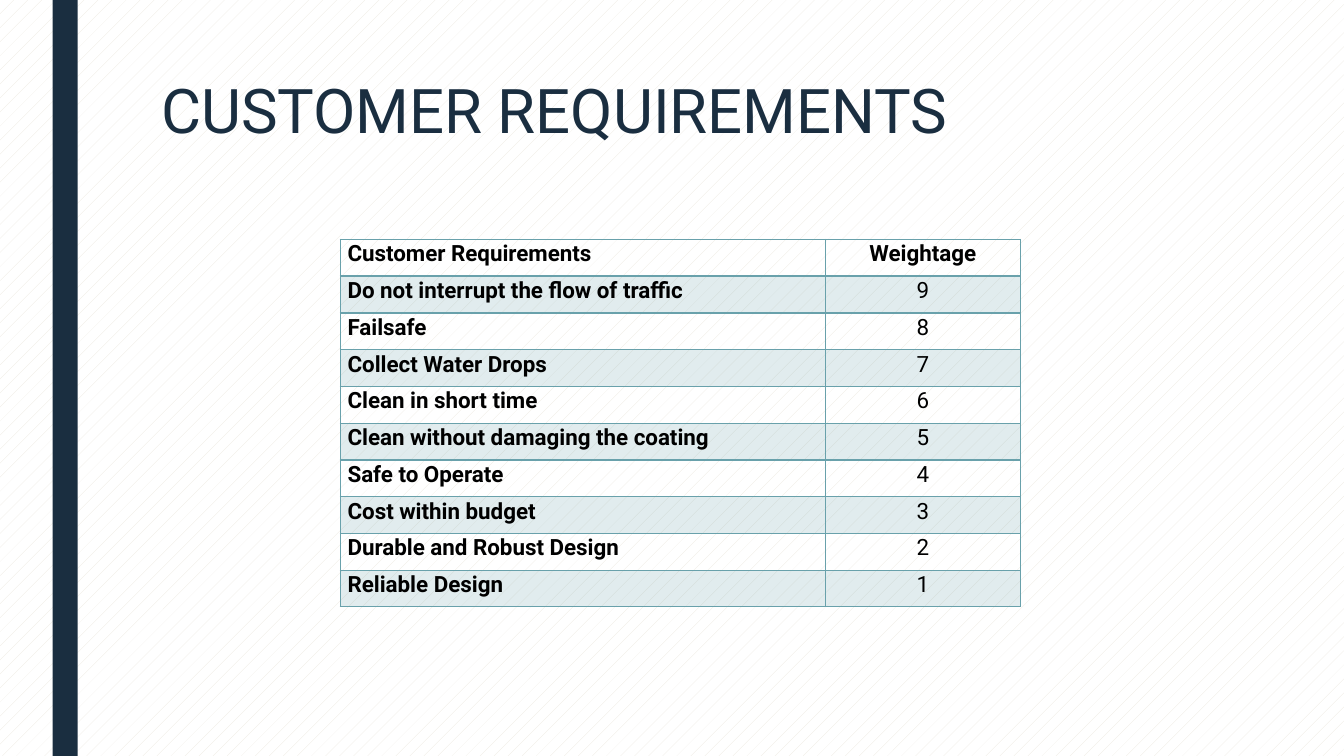
import dataclasses

import lxml.etree
import pptx
import pptx.dml.color
import pptx.enum.dml
import pptx.enum.shapes
import pptx.enum.text
import pptx.oxml
import pptx.oxml.ns
import pptx.util

EMU_PER_PX = 9525
PAGE_WIDTH, PAGE_HEIGHT = 1280, 720

REQUIREMENTS = [
    "Do not interrupt the flow of traffic",
    "Failsafe",
    "Collect Water Drops",
    "Clean in short time",
    "Clean without damaging the coating",
    "Safe to Operate",
    "Cost within budget",
    "Durable and Robust Design",
    "Reliable Design",
]


@dataclasses.dataclass(frozen=True)
class Theme:
    font: str = "Roboto"
    navy: str = "1A2E40"
    teal: str = "69A1AB"
    black: str = "000000"
    paper: str = "FFFFFF"
    hatch: str = "EBE7DD"
    title_size: int = 44
    table_size: int = 16
    band_opacity: int = 20


THEME = Theme()


def px(length):
    return pptx.util.Emu(length * EMU_PER_PX)


def rgb(color):
    return pptx.dml.color.RGBColor.from_string(color)


def style_font(para, size, color, bold=False):
    para.font.name = THEME.font
    para.font.size = pptx.util.Pt(size)
    para.font.color.rgb = rgb(color)
    para.font.bold = bold


def paint_background(page):
    fill = page.background.fill
    fill.patterned()
    fill.pattern = pptx.enum.dml.MSO_PATTERN.PERCENT_5
    fill.fore_color.rgb = rgb(THEME.hatch)
    fill.back_color.rgb = rgb(THEME.paper)


def add_side_bar(page, box):
    bar = page.shapes.add_shape(
        pptx.enum.shapes.MSO_SHAPE.RECTANGLE, *map(px, box))
    bar.shadow.inherit = False
    bar.fill.solid()
    bar.fill.fore_color.rgb = rgb(THEME.navy)
    bar.line.fill.background()


def add_title(page, box, text):
    frame = page.shapes.add_textbox(*map(px, box)).text_frame
    frame.word_wrap = True
    frame.vertical_anchor = pptx.enum.text.MSO_ANCHOR.TOP
    para = frame.paragraphs[0]
    para.text = text
    para.line_spacing = 0.89
    style_font(para, THEME.title_size, THEME.navy)


def add_border(cell, side, width):
    properties = cell._tc.get_or_add_tcPr()
    line = lxml.etree.SubElement(
        properties, pptx.oxml.ns.qn(f"a:ln{side}"), w=str(pptx.util.Pt(width)))
    fill = lxml.etree.SubElement(line, pptx.oxml.ns.qn("a:solidFill"))
    lxml.etree.SubElement(fill, pptx.oxml.ns.qn("a:srgbClr"), val=THEME.teal)


def fill_band(cell):
    cell.fill.solid()
    cell.fill.fore_color.rgb = rgb(THEME.teal)
    color = cell._tc.tcPr.find(".//" + pptx.oxml.ns.qn("a:solidFill") + "[last()]")
    color = cell._tc.tcPr.findall(pptx.oxml.ns.qn("a:solidFill"))[-1][0]
    lxml.etree.SubElement(
        color, pptx.oxml.ns.qn("a:alpha"), val=str(THEME.band_opacity * 1000))


def add_cell(cell, text, row, column):
    cell.margin_left = cell.margin_right = px(7)
    cell.margin_top = cell.margin_bottom = 0

    # Borders, heavier under the header
    for side in "LRTB":
        under_header = (row, side) in ((0, "B"), (1, "T"))
        add_border(cell, side, 2 if under_header else 1)

    # Alternate rows are tinted
    if row % 2:
        fill_band(cell)
    else:
        cell.fill.background()

    para = cell.text_frame.paragraphs[0]
    para.text = text
    para.line_spacing = 1.07
    if column == 1:
        para.alignment = pptx.enum.text.PP_ALIGN.CENTER
    style_font(para, THEME.table_size, THEME.black, row == 0 or column == 0)


def add_requirements_table(page, box, rows):
    left, top, width, height = box
    weight_width = 186
    table = page.shapes.add_table(len(rows), 2, *map(px, box)).table
    table.first_row = table.horz_banding = False
    table.columns[0].width = px(width - weight_width)
    table.columns[1].width = px(weight_width)
    for row, values in enumerate(rows):
        table.rows[row].height = px(height // len(rows))
        for column, text in enumerate(values):
            add_cell(table.cell(row, column), text, row, column)


def build_requirements_slide(deck):
    page = deck.slides.add_slide(deck.slide_layouts[6])
    paint_background(page)
    add_side_bar(page, (50, 0, 24, PAGE_HEIGHT))
    add_title(page, (144, 72, 1008, 156), "CUSTOMER REQUIREMENTS")

    # Weights count down from the most important requirement
    weights = range(len(REQUIREMENTS), 0, -1)
    rows = [("Customer Requirements", "Weightage")]
    rows += zip(REQUIREMENTS, map(str, weights))
    add_requirements_table(page, (324, 228, 648, 350), rows)


def main():
    deck = pptx.Presentation()
    deck.slide_width, deck.slide_height = px(PAGE_WIDTH), px(PAGE_HEIGHT)
    build_requirements_slide(deck)
    deck.save("out.pptx")


if __name__ == "__main__":
    main()
